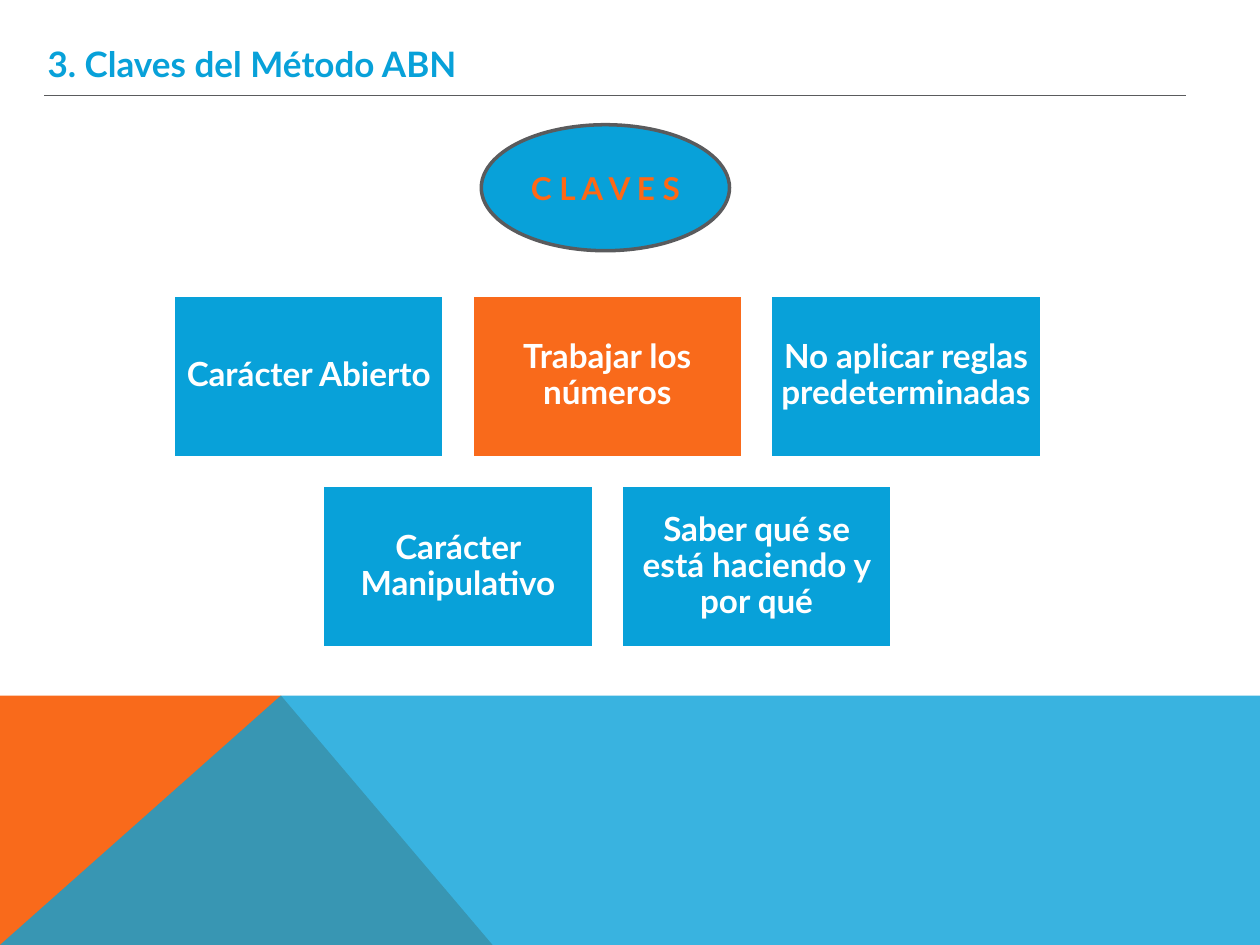
from lxml import etree
from pptx import Presentation
from pptx.dml.color import RGBColor
from pptx.enum.shapes import MSO_CONNECTOR, MSO_SHAPE
from pptx.enum.text import MSO_ANCHOR, PP_ALIGN
from pptx.oxml.ns import qn
from pptx.util import Inches, Pt

RECTANGLE, OVAL = MSO_SHAPE.RECTANGLE, MSO_SHAPE.OVAL
STRAIGHT = MSO_CONNECTOR.STRAIGHT
MIDDLE, TOP = MSO_ANCHOR.MIDDLE, MSO_ANCHOR.TOP
CENTER, LEFT = PP_ALIGN.CENTER, PP_ALIGN.LEFT

WIDTH, HEIGHT = 10, 7.5
FONT = "Lato"
COLORS = {
    "blue": "08A1D9",
    "orange": "F96A1B",
    "bright_orange": "FF6815",
    "gray": "5A5B5D",
    "white": "FFFFFF",
}
KEY_WIDTH, KEY_HEIGHT, KEY_GAP = 2.15, 1.29, 0.22
KEYS_CENTER, KEYS_TOP = 4.82, 2.34
KEY_ROWS = [
    [
        ("Carácter Abierto", "blue"),
        ("Trabajar los números", "orange"),
        ("No aplicar reglas predeterminadas", "blue"),
    ],
    [
        ("Carácter Manipulativo", "blue"),
        ("Saber qué se está haciendo y por qué", "blue"),
    ],
]
FOOTER_TOP, FOOTER_PEAK, FOOTER_FOOT = 5.52, 2.23, 3.91


def rgb(name):
    """Return the named colour."""
    return RGBColor.from_string(COLORS[name])


def write_text(shape, text, size, color, align=CENTER, anchor=MIDDLE,
               inset=None, line_spacing=None, space_before=None):
    """Write one bold paragraph into a shape."""
    frame = shape.text_frame
    frame.word_wrap = True
    frame.vertical_anchor = anchor
    if inset is not None:
        frame.margin_left = frame.margin_right = Inches(inset)
        frame.margin_top = frame.margin_bottom = Inches(inset)
    paragraph = frame.paragraphs[0]
    paragraph.alignment = align
    paragraph.line_spacing = line_spacing
    paragraph.space_before = space_before
    run = paragraph.add_run()
    run.text = text
    run.font.name = FONT
    run.font.size = Pt(size)
    run.font.bold = True
    run.font.color.rgb = rgb(color)


def add_figure(slide, preset, left, top, width, height, fill, outline):
    """Add a filled and outlined preset shape."""
    figure = slide.shapes.add_shape(
        preset, Inches(left), Inches(top), Inches(width), Inches(height))
    figure.shadow.inherit = False
    figure.fill.solid()
    figure.fill.fore_color.rgb = rgb(fill)
    figure.line.color.rgb = rgb(outline)
    figure.line.width = Pt(2)
    return figure


def add_footer_panel(slide, corners, fill, opacity=100):
    """Add a borderless polygon with the given opacity in percent."""
    points = [(Inches(x), Inches(y)) for x, y in corners]
    builder = slide.shapes.build_freeform(*points[0])
    builder.add_line_segments(points[1:], close=True)
    panel = builder.convert_to_shape()
    panel.shadow.inherit = False
    panel.fill.solid()
    panel.fill.fore_color.rgb = rgb(fill)
    panel.line.fill.background()
    if opacity < 100:
        color = panel.fill._xPr.find(qn("a:solidFill"))[0]
        etree.SubElement(color, qn("a:alpha"), val=str(opacity * 1000))


def add_footer(slide):
    """Add the two overlapping panels along the bottom."""
    peak = (FOOTER_PEAK, FOOTER_TOP)
    add_footer_panel(
        slide,
        [(0, HEIGHT), (0, FOOTER_TOP), peak, (FOOTER_FOOT, HEIGHT)],
        "orange")
    add_footer_panel(
        slide,
        [(0, HEIGHT), peak, (WIDTH, FOOTER_TOP), (WIDTH, HEIGHT)],
        "blue", opacity=80)


def add_title(slide):
    """Add the heading and the rule beneath it."""
    title = slide.shapes.add_textbox(
        Inches(0.28), Inches(0.29), Inches(8.5), Inches(0.56))
    write_text(title, "3. Claves del Método ABN", 20, "blue",
               align=LEFT, anchor=TOP, space_before=Pt(8))


def add_title_rule(slide):
    """Add the thin horizontal rule below the heading."""
    rule = slide.shapes.add_connector(
        STRAIGHT, Inches(0.35), Inches(0.76), Inches(9.41), Inches(0.76))
    rule.line.color.rgb = rgb("gray")
    rule.line.width = Pt(0.75)
    etree.SubElement(rule._element.spPr, qn("a:effectLst"))


def add_keys(slide):
    """Add the rows of key boxes, each row centred."""
    for row, keys in enumerate(KEY_ROWS):
        row_width = len(keys) * (KEY_WIDTH + KEY_GAP) - KEY_GAP
        row_left = KEYS_CENTER - row_width / 2
        top = KEYS_TOP + row * (KEY_HEIGHT + KEY_GAP)
        for column, (label, fill) in enumerate(keys):
            left = row_left + column * (KEY_WIDTH + KEY_GAP)
            key = add_figure(slide, RECTANGLE, left, top,
                             KEY_WIDTH, KEY_HEIGHT, fill, "white")
            write_text(key, label, 19, "white", inset=0.08, line_spacing=0.9)


def main():
    """Build and save the slide."""
    deck = Presentation()
    deck.slide_width, deck.slide_height = Inches(WIDTH), Inches(HEIGHT)
    slide = deck.slides.add_slide(deck.slide_layouts[6])
    add_footer(slide)
    add_title(slide)
    add_keys(slide)
    add_title_rule(slide)
    heading = add_figure(slide, OVAL, 3.82, 0.99, 1.97, 1, "blue", "gray")
    write_text(heading, "C L A V E S", 18, "bright_orange")
    deck.save("out.pptx")


if __name__ == "__main__":
    main()
